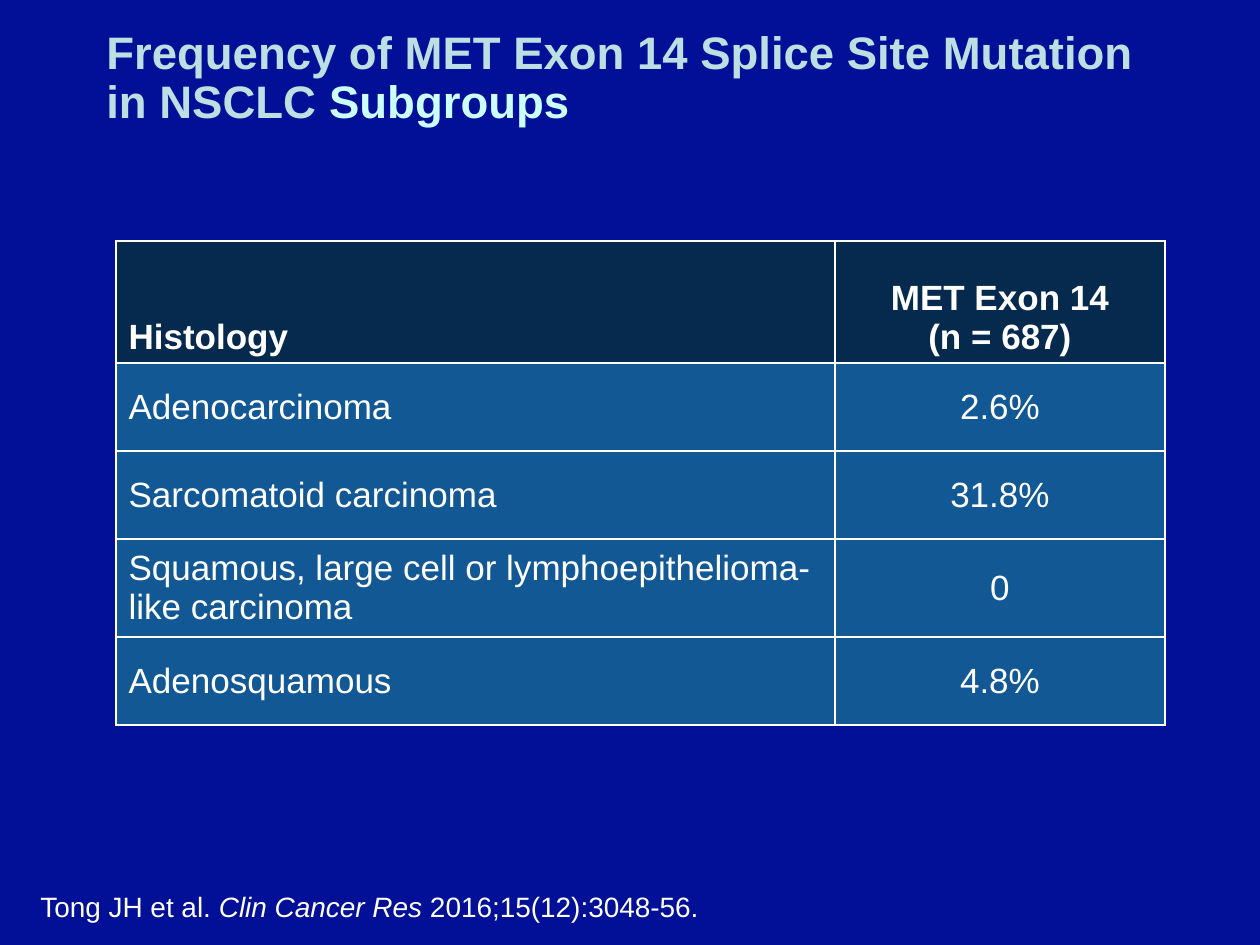
import pptx
import pptx.util
import pptx.dml.color
import pptx.enum.text
import pptx.oxml
import pptx.oxml.ns

RGB = pptx.dml.color.RGBColor
NAVY = RGB(0x01, 0x10, 0x97)
DARK = RGB(0x06, 0x2A, 0x4E)
BLUE = RGB(0x11, 0x58, 0x95)
WHITE = RGB(0xFF, 0xFF, 0xFF)
PALE = RGB(0xBB, 0xE0, 0xE3)
CYAN = RGB(0xCC, 0xFF, 0xFF)
ALIGN = pptx.enum.text.PP_ALIGN
ANCHOR = pptx.enum.text.MSO_ANCHOR
PX = 914400 / 126


def emu(*px):
    return [pptx.util.Emu(round(n * PX)) for n in px]


def write(para, text, size, color=WHITE, bold=False, italic=False):
    run = para.add_run()
    run.text = text
    font = run.font
    font.name = "Arial"
    font.size = pptx.util.Pt(size)
    font.color.rgb = color
    font.bold = bold
    font.italic = italic


deck = pptx.Presentation()
deck.slide_width, deck.slide_height = emu(1260, 945)
slide = deck.slides.add_slide(deck.slide_layouts[6])
slide.background.fill.solid()
slide.background.fill.fore_color.rgb = NAVY

# Table
rows = [
    ("Histology", "MET Exon 14\n(n = 687)"),
    ("Adenocarcinoma", "2.6%"),
    ("Sarcomatoid carcinoma", "31.8%"),
    ("Squamous, large cell or lymphoepithelioma-like carcinoma", "0"),
    ("Adenosquamous", "4.8%"),
]
widths = [719, 330]
heights = [122, 88, 88, 98, 88]
box = emu(116, 241, sum(widths), sum(heights))
table = slide.shapes.add_table(len(rows), len(widths), *box).table
for col, width in zip(table.columns, emu(*widths)):
    col.width = width
for row, height in zip(table.rows, emu(*heights)):
    row.height = height

for r, texts in enumerate(rows):
    head = r == 0
    for c, text in enumerate(texts):
        cell = table.cell(r, c)
        cell.vertical_anchor = ANCHOR.BOTTOM if head else ANCHOR.MIDDLE
        frame = cell.text_frame
        for n, line in enumerate(text.split("\n")):
            para = frame.add_paragraph() if n else frame.paragraphs[0]
            para.alignment = ALIGN.CENTER if c else ALIGN.LEFT
            write(para, line, 20, bold=head)
        # Borders must come before the fill in the cell properties
        props = cell._tc.get_or_add_tcPr()
        for side in ("lnL", "lnR", "lnT", "lnB"):
            props.append(pptx.oxml.parse_xml(
                f'<a:{side} {pptx.oxml.ns.nsdecls("a")} w="12700"><a:solidFill>'
                f'<a:srgbClr val="{WHITE}"/></a:solidFill></a:{side}>'))
        cell.fill.solid()
        cell.fill.fore_color.rgb = DARK if head else BLUE

# Citation
frame = slide.shapes.add_textbox(*emu(28, 883, 1216, 47)).text_frame
frame.word_wrap = True
para = frame.paragraphs[0]
write(para, "Tong JH et al. ", 16)
write(para, "Clin Cancer Res ", 16, italic=True)
write(para, "2016;15(12):3048-56.", 16)

# Title
frame = slide.shapes.add_textbox(*emu(94, 0, 1071, 158)).text_frame
frame.word_wrap = True
frame.vertical_anchor = ANCHOR.MIDDLE
para = frame.paragraphs[0]
para.line_spacing = 0.9
write(para, "Frequency of MET Exon 14 Splice Site Mutation in NSCLC ", 26, PALE, True)
write(para, "Subgroups", 26, CYAN, True)

deck.save("out.pptx")
